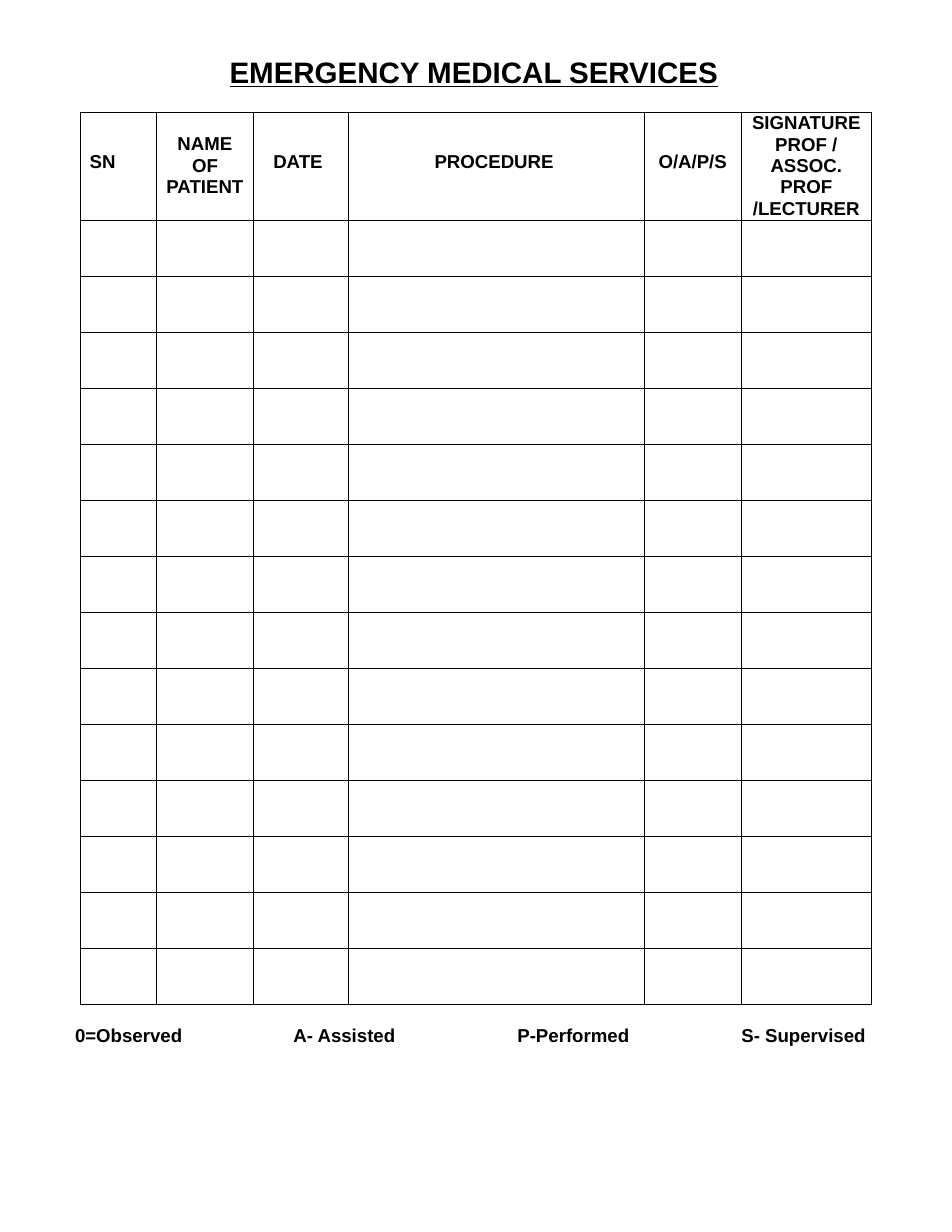
import pptx
import pptx.dml.color
import pptx.enum.text
import pptx.util
from lxml import etree
from pptx.oxml.ns import qn
from pptx.util import Inches

COLOURS = {"ink": "000000", "paper": "FFFFFF"}
FONT = "Arial"
LEFT = pptx.enum.text.PP_ALIGN.LEFT
CENTER = pptx.enum.text.PP_ALIGN.CENTER

COLUMNS = [
    (["SN"], 0.68, 0.08, 0, 0.35, LEFT),
    (["NAME OF PATIENT"], 0.86, 0.07, 0.07, 0.19, CENTER),
    (["DATE"], 0.85, 0.18, 0, 0.35, LEFT),
    (["PROCEDURE"], 2.64, 0.77, 0, 0.35, LEFT),
    (["O/A/P/S"], 0.87, 0.13, 0, 0.35, LEFT),
    (["SIGNATURE PROF / ASSOC. PROF", "/LECTURER"], 1.16, 0.08, 0.08, 0, CENTER),
]
HEADER_HEIGHT, ROW_HEIGHT, BLANK_ROWS = 0.97, 0.5, 14
LEGEND = [
    (["0=Observed"], 0.66, 0.99),
    (["A- ", "Assisted"], 2.61, 0.95),
    (["P-Performed"], 4.61, 1.03),
    (["S- Supervised"], 6.61, 1.14),
]


def colour(name):
    """Return the named colour."""
    return pptx.dml.color.RGBColor.from_string(COLOURS[name])


def add_span(para, text, size, underline=False):
    """Add one bold run to a paragraph."""
    span = para.add_run()
    span.text = text
    span.font.name = FONT
    span.font.size = pptx.util.Pt(size)
    span.font.bold = True
    span.font.underline = underline
    span.font.color.rgb = colour("ink")


def fill_box(box, texts, size, underline=False):
    """Write one left-aligned line into a tightly inset box."""
    frame = box.text_frame
    frame.word_wrap = True
    frame.auto_size = pptx.enum.text.MSO_AUTO_SIZE.SHAPE_TO_FIT_TEXT
    frame.vertical_anchor = pptx.enum.text.MSO_ANCHOR.TOP
    frame.margin_left = frame.margin_top = Inches(0.01)
    frame.margin_right = frame.margin_bottom = 0
    para = frame.paragraphs[0]
    para.alignment = LEFT
    para.space_before = pptx.util.Pt(1)
    for text in texts:
        add_span(para, text, size, underline)


def add_title(page, text):
    """Place the underlined form title."""
    title = page.shapes.title
    title.left, title.top = Inches(2.04), Inches(0.47)
    title.width, title.height = Inches(4.41), Inches(0.34)
    fill_box(title, [text], 19, underline=True)


def style_cell(cell):
    """Give a cell thin black borders and a plain fill."""
    properties = cell._tc.get_or_add_tcPr()
    for side in ("a:lnL", "a:lnR", "a:lnT", "a:lnB"):
        line = etree.SubElement(properties, qn(side), w=str(pptx.util.Pt(0.5)))
        solid = etree.SubElement(line, qn("a:solidFill"))
        etree.SubElement(solid, qn("a:srgbClr"), val=COLOURS["ink"])
    cell.fill.solid()
    cell.fill.fore_color.rgb = colour("paper")


def fill_header(cell, texts, left, right, top, alignment):
    """Write a column heading, one paragraph per text."""
    cell.margin_left, cell.margin_right = Inches(left), Inches(right)
    cell.margin_top, cell.margin_bottom = Inches(top), 0
    frame = cell.text_frame
    for index, text in enumerate(texts):
        para = frame.add_paragraph() if index else frame.paragraphs[0]
        para.alignment = alignment
        para.line_spacing = pptx.util.Pt(13.8)
        add_span(para, text, 12)


def add_log_table(page):
    """Add the ruled log with its heading row and blank rows."""
    width = sum(column[1] for column in COLUMNS)
    height = HEADER_HEIGHT + BLANK_ROWS * ROW_HEIGHT
    table = page.shapes.add_table(
        BLANK_ROWS + 1, len(COLUMNS),
        Inches(0.72), Inches(1), Inches(width), Inches(height),
    ).table
    table.first_row = table.horz_banding = False
    for row in table.rows:
        row.height = Inches(ROW_HEIGHT)
    table.rows[0].height = Inches(HEADER_HEIGHT)
    for cell in table.iter_cells():
        style_cell(cell)
    for index, (texts, column_width, *layout) in enumerate(COLUMNS):
        table.columns[index].width = Inches(column_width)
        fill_header(table.cell(0, index), texts, *layout)


def add_legend(page):
    """Add the key to the participation codes."""
    for texts, left, width in LEGEND:
        box = page.shapes.add_textbox(
            Inches(left), Inches(9.13), Inches(width), Inches(0.23))
        fill_box(box, texts, 12)


def main():
    """Build and save the log sheet."""
    deck = pptx.Presentation()
    deck.slide_width, deck.slide_height = Inches(8.5), Inches(11)
    page = deck.slides.add_slide(deck.slide_layouts[5])
    add_title(page, "EMERGENCY MEDICAL SERVICES")
    add_log_table(page)
    add_legend(page)
    deck.save("out.pptx")


if __name__ == "__main__":
    main()
